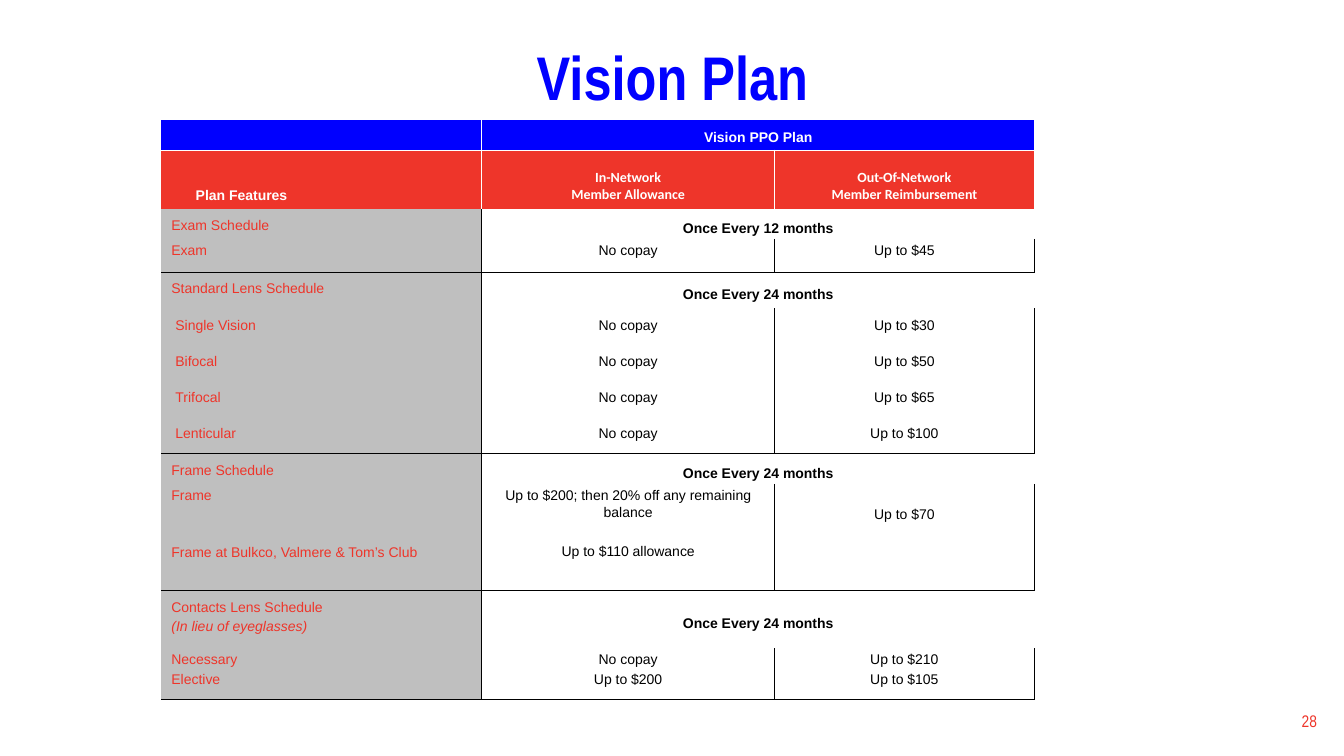
from pptx import Presentation
from pptx.dml.color import RGBColor as Rgb
from pptx.enum.text import MSO_ANCHOR as Anchor, PP_ALIGN as Align
from pptx.oxml import parse_xml
from pptx.util import Inches as In, Pt

BLUE = Rgb(0x00, 0x00, 0xFF)
RED = Rgb(0xEE, 0x35, 0x2A)
GRAY = Rgb(0xBF, 0xBF, 0xBF)
WHITE = Rgb(0xFF, 0xFF, 0xFF)
BLACK = Rgb(0x00, 0x00, 0x00)
NS = "http://schemas.openxmlformats.org/drawingml/2006/main"
PLAIN = "{2D5ABB26-0587-4C30-8999-92F81FD0307C}"

TITLE = "Vision Plan"
PAGE = "28"
PLAN = "Vision PPO Plan"
HEADS = ["Plan Features", "", "In-Network\vMember Allowance",
         "Out-Of-Network\vMember Reimbursement"]
COPAY = ["No copay"]
YEAR, TWO = "Once Every 12 months", "Once Every 24 months"

GROUPS = [
    dict(head=["Exam Schedule"], term=YEAR, high=0.3, pad=0, left=0.1,
         items=[(0.33, ["Exam"], COPAY, ["Up to $45"])]),
    dict(head=["Standard Lens Schedule"], term=TWO, high=0.36, pad=0.05, left=0.14,
         items=[(0.36, [lens], COPAY, [pay]) for lens, pay in [
             ("Single Vision", "Up to $30"), ("Bifocal", "Up to $50"),
             ("Trifocal", "Up to $65"), ("Lenticular", "Up to $100")]]),
    dict(head=["Frame Schedule"], term=TWO, high=0.3, pad=0, left=0.1,
         items=[(1.06, ["Frame", ("Frame at Bulkco, Valmere & Tom’s Club", 29)],
                 ["Up to $200; then 20% off any remaining balance",
                  ("Up to $110 allowance", 16)], ["Up to $70"])]),
    dict(head=["Contacts Lens Schedule", "(In lieu of eyeglasses)"], term=TWO,
         high=0.57, pad=0, left=0.1,
         items=[(0.51, ["Necessary", "Elective"], ["No copay", "Up to $200"],
                 ["Up to $210", "Up to $105"])]),
]
COLS = [1.59, 1.59, 2.9, 2.58]
TOPS = [0.3, 0.58]
DROP = {"Up to $70": 0.19}


def style(obj, **vals):
    for key, val in vals.items():
        setattr(obj, key, val)


def write(cell, lines, color, align=Align.CENTER, bold=False, face="Arial", lead=1.07):
    frame = cell.text_frame
    for n, line in enumerate(lines):
        text, gap = line if isinstance(line, tuple) else (line, 2)
        para = frame.add_paragraph() if n else frame.paragraphs[0]
        para.text = text
        style(para, alignment=align, line_spacing=lead)
        if n:
            para.space_before = Pt(gap)
        for run in para.runs:
            style(run.font, size=Pt(10), name=face, bold=bold,
                  italic=text.startswith("("))
            run.font.color.rgb = color


def edge(cell, **sides):
    props = cell._tc.get_or_add_tcPr()
    for side in "LRTB":
        if side in sides:
            props.append(parse_xml(
                f'<a:ln{side} xmlns:a="{NS}" w="12700"><a:solidFill>'
                f'<a:srgbClr val="{sides[side]}"/></a:solidFill></a:ln{side}>'))


def paint(cell, color):
    cell.fill.solid()
    cell.fill.fore_color.rgb = color


def inset(cell, top, low, left=0.1, anchor=Anchor.TOP):
    style(cell, margin_left=In(left), margin_right=In(0.1), margin_top=In(top),
          margin_bottom=In(low), vertical_anchor=anchor)


deck = Presentation()
style(deck, slide_width=In(13.33), slide_height=In(7.5))
slide = deck.slides.add_slide(deck.slide_layouts[5])

title = slide.shapes.title
style(title, left=In(0.92), top=In(0.4), width=In(11.5), height=In(0.79))
title.text_frame.text = TITLE
title.text_frame.vertical_anchor = Anchor.MIDDLE
para = title.text_frame.paragraphs[0]
style(para, alignment=Align.CENTER, line_spacing=0.9)
style(para.runs[0].font, size=Pt(44), name="Arial Narrow", bold=True)
para.runs[0].font.color.rgb = BLUE

highs = TOPS + [h for g in GROUPS for h in [g["high"]] + [i[0] for i in g["items"]]]
grid = slide.shapes.add_table(len(highs), len(COLS), In(1.6), In(1.19),
                              In(sum(COLS)), In(sum(highs))).table
style(grid, first_row=False, horz_banding=False)
grid._tbl.tblPr.find(f"{{{NS}}}tableStyleId").text = PLAIN
for col, wide in zip(grid.columns, COLS):
    col.width = In(wide)
for row, high in zip(grid.rows, highs):
    row.height = In(high)

for c, head in enumerate(HEADS):
    top, sub = grid.cell(0, c), grid.cell(1, c)
    side = {"L": WHITE} if c >= 2 else {}
    edge(top, **(side if c == 2 else {}), B=WHITE)
    edge(sub, **side)
    paint(top, BLUE)
    paint(sub, RED)
    inset(top, 0, 0.05, anchor=Anchor.BOTTOM)
    inset(sub, 0.05, 0.05, anchor=Anchor.BOTTOM)
    if head:
        face, lead = ("Calibri", 1.0) if c >= 2 else ("Arial", 1.07)
        write(sub, [head], WHITE, bold=True, face=face, lead=lead)
grid.cell(0, 2).merge(grid.cell(0, 3))
write(grid.cell(0, 2), [PLAN], WHITE, bold=True)

r = len(TOPS)
for group in GROUPS:
    name, term = grid.cell(r, 0), grid.cell(r, 2)
    edge(term, L=BLACK)
    paint(name, GRAY)
    inset(name, 0.08, 0)
    inset(term, 0.08, 0, anchor=Anchor.MIDDLE)
    name.merge(grid.cell(r, 1))
    term.merge(grid.cell(r, 3))
    write(name, group["head"], RED, Align.LEFT)
    write(term, [group["term"]], BLACK, bold=True)
    for n, (high, *texts) in enumerate(group["items"], 1):
        last = {"B": BLACK} if n == len(group["items"]) else {}
        for c in range(4):
            edge(grid.cell(r + n, c), **({"L": BLACK} if c >= 2 else {}), **last)
        paint(grid.cell(r + n, 0), GRAY)
        grid.cell(r + n, 0).merge(grid.cell(r + n, 1))
        for c, lines in zip((0, 2, 3), texts):
            cell = grid.cell(r + n, c)
            inset(cell, 0.03 + group["pad"] + DROP.get(lines[0], 0), group["pad"],
                  0.1 if c else group["left"])
            write(cell, lines, BLACK if c else RED, Align.CENTER if c else Align.LEFT)
    r += n + 1

for cell in grid.iter_cells():
    if not cell.text_frame.text:
        cell.text_frame.paragraphs[0]._p.append(
            parse_xml(f'<a:endParaRPr xmlns:a="{NS}" sz="1000"/>'))

box = slide.shapes.add_textbox(In(10.16), In(6.95), In(3), In(0.4)).text_frame
style(box, word_wrap=True, vertical_anchor=Anchor.MIDDLE, text=PAGE)
para = box.paragraphs[0]
para.alignment = Align.RIGHT
style(para.runs[0].font, size=Pt(12), name="Arial Narrow")
para.runs[0].font.color.rgb = RED

deck.save("out.pptx")
